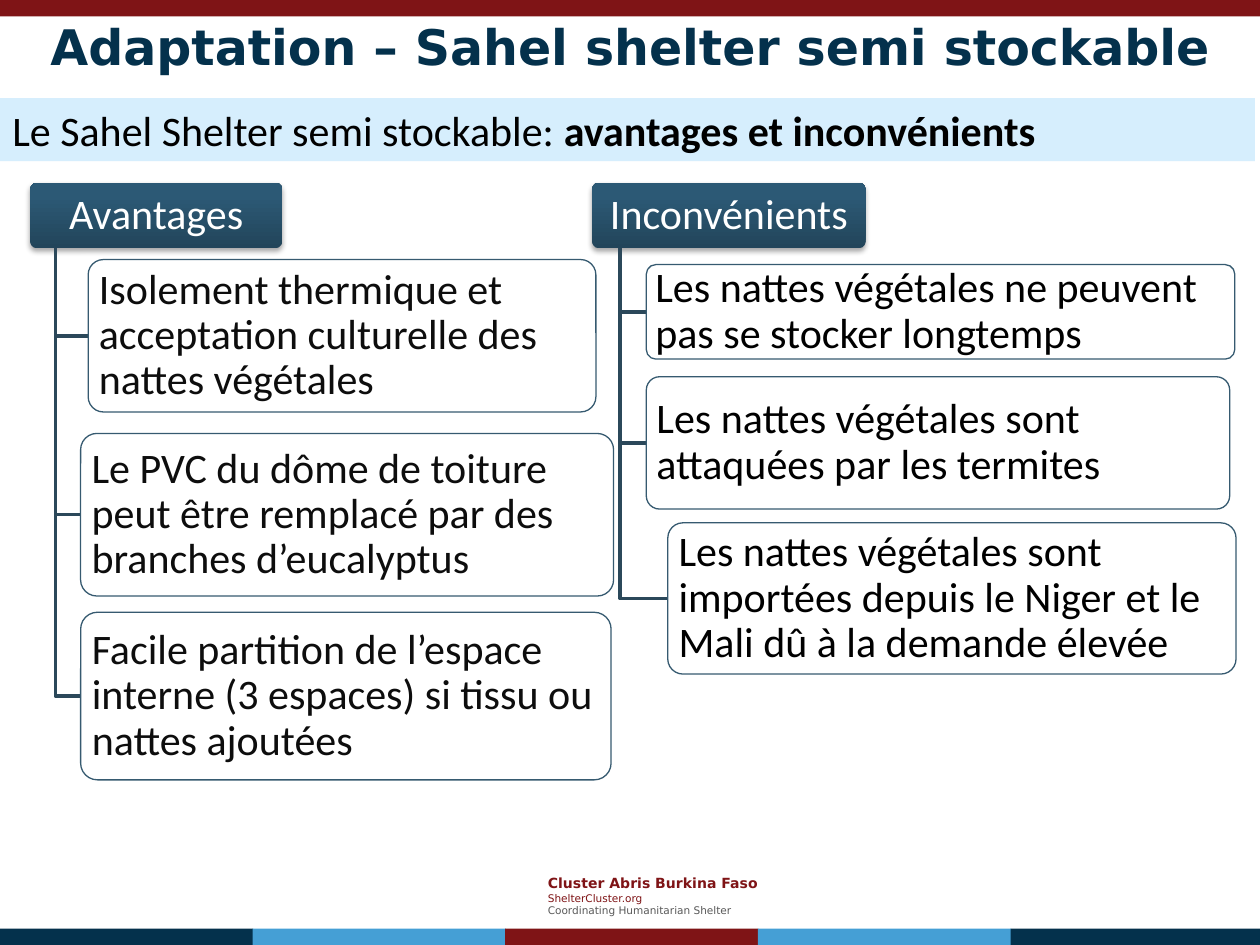
"""Build the slide on the advantages and drawbacks of the semi-stockable Sahel shelter."""
from typing import NamedTuple

from lxml.etree import SubElement
from pptx import Presentation
from pptx.dml.color import RGBColor
from pptx.enum.shapes import MSO_SHAPE as Preset
from pptx.enum.text import MSO_ANCHOR as Anchor, PP_ALIGN as Align
from pptx.oxml.ns import qn
from pptx.shapes.autoshape import Shape
from pptx.slide import Slide
from pptx.text.text import TextFrame
from pptx.util import Inches, Pt

BLACK = RGBColor(0x00, 0x00, 0x00)
INK = RGBColor(0x0D, 0x0D, 0x0D)
WHITE = RGBColor(0xFF, 0xFF, 0xFF)
GREY = RGBColor(0x59, 0x59, 0x59)
RED = RGBColor(0x7F, 0x14, 0x16)
NAVY = RGBColor(0x04, 0x31, 0x4C)
BLUE = RGBColor(0x45, 0x9F, 0xD5)
PALE_BLUE = RGBColor(0xD6, 0xEE, 0xFD)
HEADER_DARK = RGBColor(0x22, 0x45, 0x5A)
HEADER_LIGHT = RGBColor(0x2C, 0x59, 0x75)
BRANCH = RGBColor(0x2B, 0x48, 0x5A)
OUTLINE = RGBColor(0x36, 0x5A, 0x70)

HEADER_TOP, HEADER_HEIGHT = 1.45, 0.52
BODY = {"name": "Calibri", "size": Pt(24)}
BOX_FRAME = {
    "word_wrap": True,
    "vertical_anchor": Anchor.MIDDLE,
    "margin_left": Inches(0.05),
    "margin_right": Inches(0.05),
    "margin_top": Inches(0.03),
    "margin_bottom": Inches(0.03),
}


class Box(NamedTuple):
    left: float
    top: float
    width: float
    height: float


class Item(NamedTuple):
    box: Box
    text: str


class Column(NamedTuple):
    title: str
    left: float
    width: float
    trunk: float
    color: RGBColor
    items: list[Item]


class Run(NamedTuple):
    text: str
    font: dict
    color: RGBColor


COLUMNS = [
    Column("Avantages", 0.24, 2, 0.44, INK, [
        Item(Box(0.7, 2.06, 4.03, 1.21),
             "Isolement thermique et acceptation culturelle des nattes végétales"),
        Item(Box(0.64, 3.44, 4.23, 1.29),
             "Le PVC du dôme de toiture peut être remplacé par des branches d’eucalyptus"),
        Item(Box(0.64, 4.86, 4.21, 1.33),
             "Facile partition de l’espace interne (3 espaces) si tissu ou nattes ajoutées"),
    ]),
    Column("Inconvénients", 4.7, 2.17, 4.92, BLACK, [
        Item(Box(5.13, 2.1, 4.67, 0.75),
             "Les nattes végétales ne peuvent pas se stocker longtemps"),
        Item(Box(5.13, 2.99, 4.63, 1.05),
             "Les nattes végétales sont attaquées par les termites"),
        Item(Box(5.3, 4.15, 4.51, 1.2),
             "Les nattes végétales sont importées depuis le Niger et le Mali dû à la demande élevée"),
    ]),
]


def set_values(target: object, values: dict) -> None:
    for name, value in values.items():
        setattr(target, name, value)


def write(frame: TextFrame, lines: list[list[Run]], frame_format: dict, paragraph_format: dict) -> None:
    set_values(frame, frame_format)
    for index, runs in enumerate(lines):
        paragraph = frame.add_paragraph() if index else frame.paragraphs[0]
        set_values(paragraph, paragraph_format)
        for text, font, color in runs:
            run = paragraph.add_run()
            run.text = text
            set_values(run.font, font)
            run.font.color.rgb = color


def add_panel(slide: Slide, box: Box, fill: RGBColor, preset: Preset = Preset.RECTANGLE) -> Shape:
    shape = slide.shapes.add_shape(preset, *map(Inches, box))
    shape.shadow.inherit = False
    shape.fill.solid()
    shape.fill.fore_color.rgb = fill
    shape.line.fill.background()
    if preset == Preset.ROUNDED_RECTANGLE:
        shape.adjustments[0] = 0.1
    return shape


def add_text(slide: Slide, box: Box, lines: list[list[Run]], align: Align) -> None:
    frame = slide.shapes.add_textbox(*map(Inches, box)).text_frame
    write(frame, lines, {"word_wrap": True, "vertical_anchor": Anchor.MIDDLE}, {"alignment": align})


def add_header(slide: Slide, column: Column) -> None:
    box = Box(column.left, HEADER_TOP, column.width, HEADER_HEIGHT)
    header = add_panel(slide, box, HEADER_DARK, Preset.ROUNDED_RECTANGLE)
    header.fill.gradient()
    header.fill.gradient_angle = 90
    for stop, position, color in zip(header.fill.gradient_stops, (0, 0.8), (HEADER_DARK, HEADER_LIGHT)):
        stop.position = position
        stop.color.rgb = color
    effects = header.element.spPr.find(qn("a:effectLst"))
    shadow = SubElement(effects, qn("a:outerShdw"), blurRad=str(Pt(3.1)), dist=str(Pt(1.8)),
                        dir="5400000", rotWithShape="0")
    shadow_color = SubElement(shadow, qn("a:srgbClr"), val=str(BLACK))
    SubElement(shadow_color, qn("a:alpha"), val="35000")
    write(header.text_frame, [[Run(column.title, BODY, WHITE)]], BOX_FRAME,
          {"alignment": Align.CENTER, "line_spacing": 0.9})


def add_branch(slide: Slide, trunk: float, box: Box) -> None:
    middle = box.top + box.height / 2
    start = HEADER_TOP + HEADER_HEIGHT
    builder = slide.shapes.build_freeform(Inches(trunk), Inches(start))
    builder.add_line_segments(
        [(Inches(trunk), Inches(middle)), (Inches(box.left), Inches(middle))], close=False)
    branch = builder.convert_to_shape()
    branch.shadow.inherit = False
    branch.fill.background()
    branch.line.color.rgb = BRANCH
    branch.line.width = Pt(2)


def add_column(slide: Slide, column: Column) -> None:
    add_header(slide, column)
    for box, text in column.items:
        add_branch(slide, column.trunk, box)
        panel = add_panel(slide, box, WHITE, Preset.ROUNDED_RECTANGLE)
        panel.line.color.rgb = OUTLINE
        panel.line.width = Pt(0.75)
        write(panel.text_frame, [[Run(text, BODY, column.color)]], BOX_FRAME,
              {"alignment": Align.LEFT, "line_spacing": 0.9})


def main() -> None:
    presentation = Presentation()
    presentation.slide_width, presentation.slide_height = Inches(10), Inches(7.5)
    slide = presentation.slides.add_slide(presentation.slide_layouts[6])

    small = {"name": "DejaVu Sans", "size": Pt(6)}
    add_text(slide, Box(4.25, 6.89, 1.9, 0.44), [
        [Run("Cluster Abris Burkina Faso", {**small, "size": Pt(8), "bold": True}, RED)],
        [Run("ShelterCluster.org", small, RED)],
        [Run("Coordinating Humanitarian Shelter", small, GREY)],
    ], Align.LEFT)
    add_panel(slide, Box(0, 0, 10, 0.13), RED)
    for index, color in enumerate((NAVY, BLUE, RED, BLUE, NAVY)):
        add_panel(slide, Box(index * 2.005, 7.37, 2.01, 0.13), color)

    subtitle = add_panel(slide, Box(0, 0.78, 9.96, 0.5), PALE_BLUE)
    write(subtitle.text_frame, [[
        Run("Le Sahel Shelter semi stockable: ", BODY, BLACK),
        Run("avantages et inconvénients", {**BODY, "bold": True}, BLACK),
    ]], {"word_wrap": True, "vertical_anchor": Anchor.TOP}, {"alignment": Align.LEFT})

    for column in COLUMNS:
        add_column(slide, column)

    title_font = {"name": "DejaVu Sans", "size": Pt(28), "bold": True}
    add_text(slide, Box(0, 0.22, 10, 0.29),
             [[Run("Adaptation – Sahel shelter semi stockable", title_font, NAVY)]], Align.CENTER)
    presentation.save("out.pptx")


if __name__ == "__main__":
    main()
